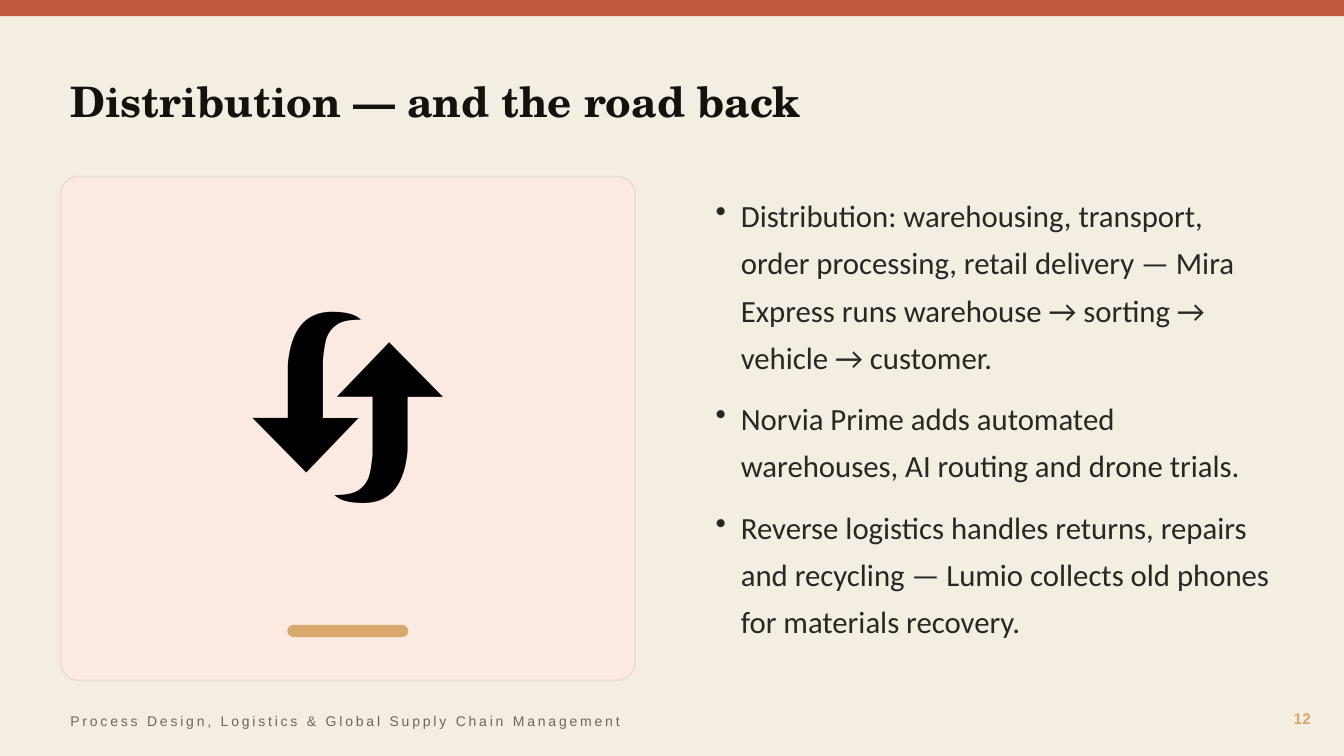
"""Build the slide on distribution and reverse logistics."""
from lxml.etree import SubElement
from pptx import Presentation
from pptx.dml.color import RGBColor
from pptx.enum.shapes import MSO_SHAPE
from pptx.enum.text import MSO_ANCHOR, PP_ALIGN
from pptx.oxml.ns import qn
from pptx.util import Inches, Pt

TITLE = "Distribution — and the road back"
ICON = "🔄"
BULLETS = [
    "Distribution: warehousing, transport, order processing, retail delivery — Mira "
    "Express runs warehouse → sorting → vehicle → customer.",
    "Norvia Prime adds automated warehouses, AI routing and drone trials.",
    "Reverse logistics handles returns, repairs and recycling — Lumio collects old "
    "phones for materials recovery.",
]
FOOTER = "Process Design, Logistics & Global Supply Chain Management"
PAGE = "12"

WIDTH, HEIGHT = 13.33, 7.5
LEFT, CARD_TOP, CARD_W, CARD_H = 0.6, 1.75, 5.7, 5
BAR_W, BAR_H = 1.2, 0.12


def rgb(value):
    return RGBColor.from_string(value)


def add_block(s, kind, box, fill, line=None, radius=None):
    sp = s.shapes.add_shape(kind, *map(Inches, box))
    sp.shadow.inherit = False
    sp.fill.solid()
    sp.fill.fore_color.rgb = rgb(fill)
    if line:
        sp.line.color.rgb = rgb(line)
        sp.line.width = Pt(1)
    else:
        sp.line.fill.background()
    if radius is not None:
        sp.adjustments[0] = radius


def make_bullet(p):
    pPr = p._p.get_or_add_pPr()
    pPr.set("marL", str(Inches(0.25)))
    pPr.set("indent", str(-Inches(0.25)))
    p.line_spacing = 1.28
    p.space_after = Pt(10)
    SubElement(pPr, qn("a:buChar"), char="•")


def add_text(s, text, box, size, color, font="Arial", bold=False,
             align=PP_ALIGN.LEFT, anchor=MSO_ANCHOR.MIDDLE, spacing=None, bullets=False):
    tf = s.shapes.add_textbox(*map(Inches, box)).text_frame
    tf.word_wrap = True
    tf.vertical_anchor = anchor
    for i, line in enumerate([text] if isinstance(text, str) else text):
        p = tf.add_paragraph() if i else tf.paragraphs[0]
        p.alignment = align
        if bullets:
            make_bullet(p)
        r = p.add_run()
        r.text = line
        r.font.name, r.font.size, r.font.bold = font, Pt(size), bold
        r.font.color.rgb = rgb(color)
        if spacing:
            r._r.get_or_add_rPr().set("spc", str(spacing * 100))


def main():
    prs = Presentation()
    prs.slide_width, prs.slide_height = Inches(WIDTH), Inches(HEIGHT)
    s = prs.slides.add_slide(prs.slide_layouts[6])
    s.background.fill.solid()
    s.background.fill.fore_color.rgb = rgb("F4EDE2")

    add_block(s, MSO_SHAPE.RECTANGLE, (0, 0, WIDTH, 0.16), "C45A3D")
    add_text(s, TITLE, (LEFT, 0.5, 12.1, 1), 30, "16110D", font="TeX Gyre Schola", bold=True)

    add_block(s, MSO_SHAPE.ROUNDED_RECTANGLE, (LEFT, CARD_TOP, CARD_W, CARD_H),
              "FBE9E2", line="E4DDD0", radius=0.036)
    add_text(s, ICON, (LEFT, CARD_TOP, CARD_W, 4.1), 150, "000000",
             font="Calibri", align=PP_ALIGN.CENTER)
    bar_left = LEFT + (CARD_W - BAR_W) / 2
    add_block(s, MSO_SHAPE.ROUNDED_RECTANGLE, (bar_left, 6.2, BAR_W, BAR_H),
              "D9A86C", radius=0.5)

    add_text(s, BULLETS, (7, 1.8, CARD_W, 5), 22, "2A2622", font="Calibri",
             anchor=MSO_ANCHOR.TOP, bullets=True)
    add_text(s, PAGE, (12.2, 6.95, 0.9, 0.35), 11, "D9A86C", bold=True, align=PP_ALIGN.RIGHT)
    add_text(s, FOOTER, (LEFT, 7, 8, 0.3), 10, "6E665C", spacing=2)
    prs.save("out.pptx")


if __name__ == "__main__":
    main()
